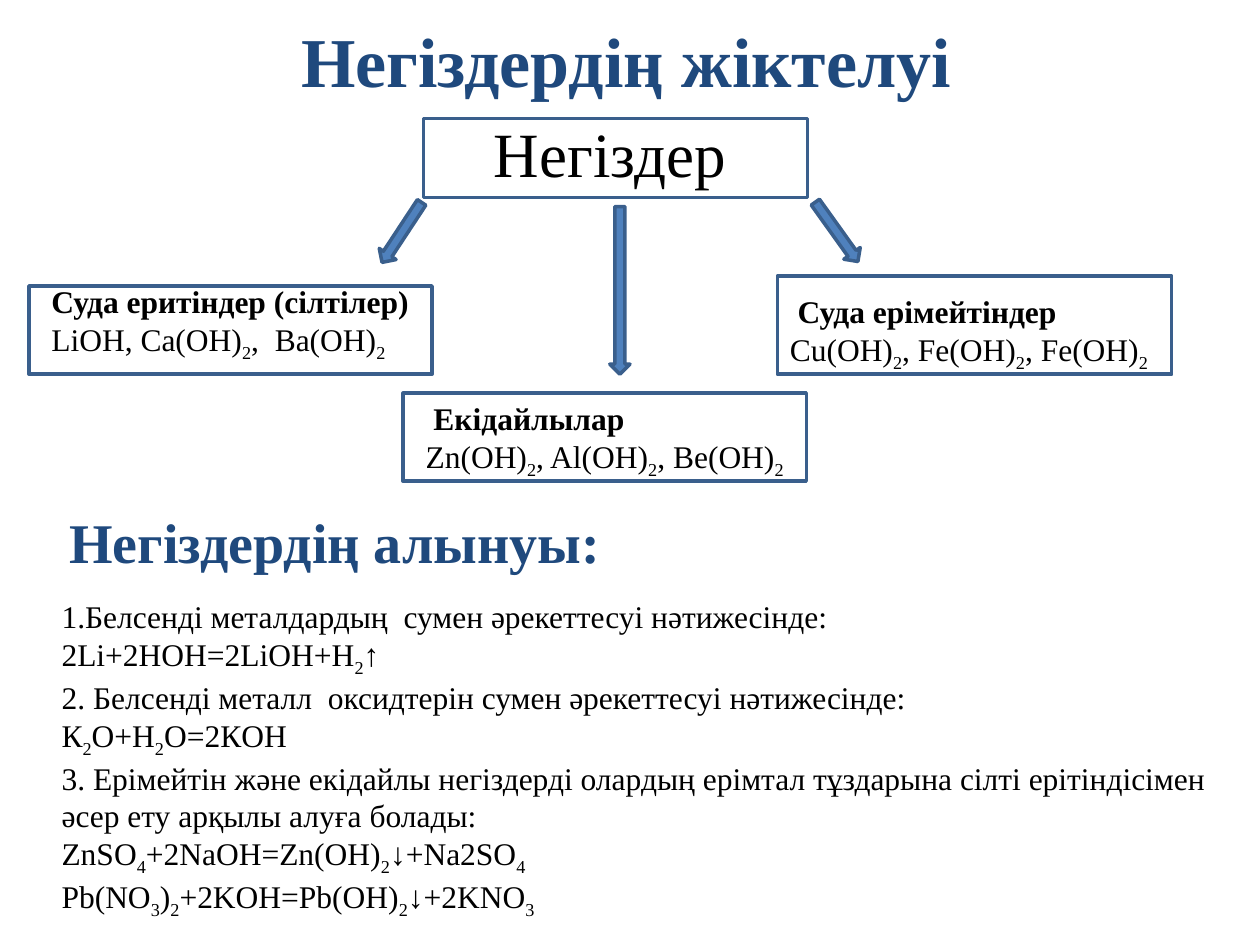
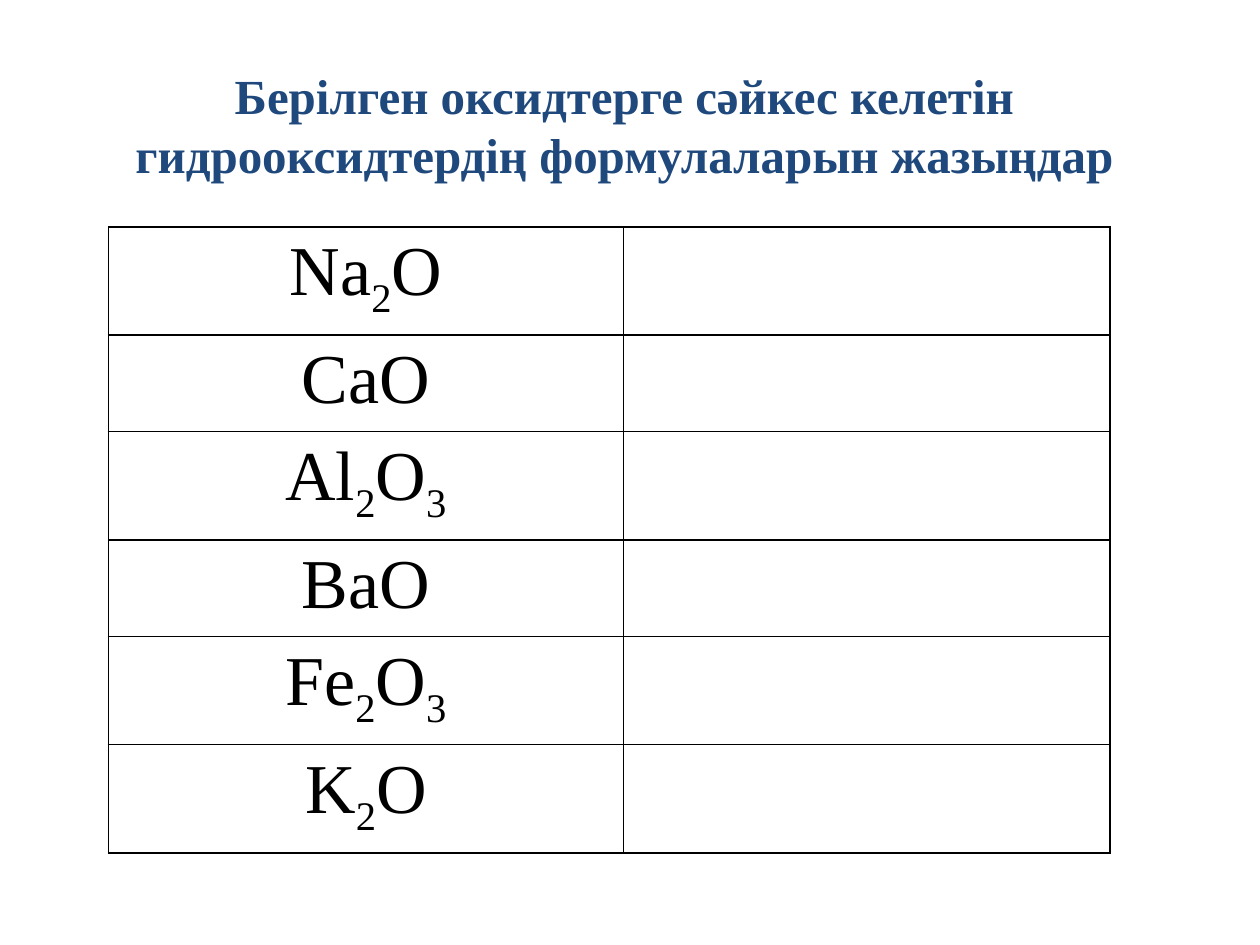
from pptx import Presentation
from pptx.dml.color import RGBColor
from pptx.enum.shapes import MSO_SHAPE as Shape
from pptx.enum.text import MSO_ANCHOR as Anchor, PP_ALIGN as Align
from pptx.oxml import parse_xml
from pptx.oxml.ns import nsdecls
from pptx.util import Inches, Pt

NAVY = RGBColor(0x1F, 0x49, 0x7D)
BLUE = RGBColor(0x4F, 0x81, 0xBD)
OUTLINE = RGBColor(0x3A, 0x5F, 0x8C)
BLACK = RGBColor(0, 0, 0)
WHITE = RGBColor(255, 255, 255)

BODY = {"name": "Times New Roman", "size": Pt(18), "bold": False}
HEADING = {**BODY, "bold": True}


class Lesson:
    def __init__(self):
        self.deck = Presentation()
        self.deck.slide_width = Inches(10)
        self.deck.slide_height = Inches(7.5)
        self.page = None

    def new_page(self):
        self.page = self.deck.slides.add_slide(self.deck.slide_layouts[6])

    def span(self, para, words, style, color, subscript=False):
        span = para.add_run()
        span.text = words
        for key, value in style.items():
            setattr(span.font, key, value)
        span.font.color.rgb = color
        if subscript:
            span.font._element.set("baseline", "-25000")

    def formula(self, para, line, style, color):
        start, *pieces = line.split("_")
        self.span(para, start, style, color)
        for piece in pieces:
            self.span(para, piece[0], style, color, subscript=True)
            if piece[1:]:
                self.span(para, piece[1:], style, color)

    def text(self, place, lines, styles=(BODY,), color=BLACK, align=Align.LEFT, anchor=Anchor.TOP):
        frame = self.page.shapes.add_textbox(*map(Inches, place)).text_frame
        frame.word_wrap = True
        frame.vertical_anchor = anchor
        for index, line in enumerate(lines):
            para = frame.add_paragraph() if index else frame.paragraphs[0]
            para.alignment = align
            self.formula(para, line, styles[min(index, len(styles) - 1)], color)

    def heading(self, place, line, size, anchor=Anchor.TOP):
        style = {**HEADING, "size": Pt(size)}
        self.text(place, [line], (style,), NAVY, Align.CENTER, anchor)

    def shape(self, kind, place, fill, rotation=0):
        shape = self.page.shapes.add_shape(kind, *map(Inches, place))
        shape.shadow.inherit = False
        shape.rotation = rotation
        shape.fill.solid()
        shape.fill.fore_color.rgb = fill
        shape.line.color.rgb = OUTLINE
        shape.line.width = Pt(2)

    def frame(self, place):
        self.shape(Shape.RECTANGLE, place, WHITE)

    def arrow(self, place, rotation=0):
        self.shape(Shape.DOWN_ARROW, place, BLUE, rotation)

    def border(self, cell):
        properties = cell._tc.get_or_add_tcPr()
        for side in "LRTB":
            properties.append(parse_xml(
                f'<a:ln{side} {nsdecls("a")} w="{Pt(1)}"><a:solidFill>'
                f'<a:srgbClr val="{BLACK}"/></a:solidFill></a:ln{side}>'))

    def table(self, place, widths, row_height, formulas):
        table = self.page.shapes.add_table(
            len(formulas), len(widths), *map(Inches, place)).table
        table.first_row = table.horz_banding = False
        for column, width in zip(table.columns, widths):
            column.width = Inches(width)
        for row, line in zip(table.rows, formulas):
            row.height = Inches(row_height)
            for cell in row.cells:
                self.border(cell)
                cell.fill.background()
            para = row.cells[0].text_frame.paragraphs[0]
            para.alignment = Align.CENTER
            self.formula(para, line, {**BODY, "size": Pt(40)}, BLACK)


def add_classification(lesson):
    lesson.new_page()
    lesson.heading((0.47, 0, 9, 0.94), "Негіздердің жіктелуі", 40, Anchor.MIDDLE)
    lesson.frame((3.36, 0.94, 3.05, 0.63))
    lesson.text((3.59, 0.86, 2.5, 0.71), ["Негіздер"],
                ({**BODY, "size": Pt(36)},), align=Align.CENTER)

    groups = [
        ((0.23, 2.27, 3.2, 0.7), (0.31, 2.19, 3.44, 0.71),
         ["Суда еритіндер (сілтілер)", "LiOH, Ca(OH)_2,  Ba(OH)_2"]),
        ((6.17, 2.19, 3.13, 0.78), (6.17, 2.27, 3.28, 0.71),
         [" Суда ерімейтіндер", "Cu(OH)_2, Fe(OH)_2, Fe(OH)_2"]),
        ((3.2, 3.12, 3.2, 0.7), (3.28, 3.12, 3.2, 0.71),
         [" Екідайлылар", "Zn(OH)_2, Al(OH)_2, Be(OH)_2"]),
    ]
    for box, label, lines in groups:
        lesson.frame(box)
        lesson.text(label, lines, (HEADING, BODY))

    lesson.arrow((3.11, 1.56, 0.16, 0.57), 33.4)
    lesson.arrow((6.56, 1.55, 0.16, 0.58), 324.4)
    lesson.arrow((4.84, 1.64, 0.16, 1.33))

    lesson.heading((0.16, 3.98, 5, 0.64), "Негіздердің алынуы:", 32)
    lesson.text((0.39, 4.69, 9.38, 2.75), [
        "1.Белсенді металдардың  сумен әрекеттесуі нәтижесінде:",
        "2Li+2HOH=2LiOH+H_2↑",
        "2. Белсенді металл  оксидтерін сумен әрекеттесуі нәтижесінде:",
        "К_2O+Н_2O=2КOН",
        "3. Ерімейтін және екідайлы негіздерді олардың ерімтал тұздарына сілті "
        "ерітіндісімен әсер ету арқылы алуға болады:",
        "ZnSO_4+2NaOH=Zn(OH)_2↓+Na2SO_4",
        "Pb(NO_3)_2+2KOH=Pb(OH)_2↓+2KNO_3",
    ])


def add_exercise(lesson):
    lesson.new_page()
    lesson.table((0.86, 1.8, 7.95, 4.56), (4.09, 3.86), 0.76,
                 ["Na_2O", "CaO", "Al_2O_3", "BaO", "Fe_2O_3", "K_2O"])
    lesson.heading((0.23, 0.47, 9.45, 1.04),
                   "Берілген оксидтерге сәйкес келетін гидрооксидтердің "
                   "формулаларын жазыңдар", 28)


def main():
    lesson = Lesson()
    add_classification(lesson)
    add_exercise(lesson)
    lesson.deck.save("out.pptx")


if __name__ == "__main__":
    main()
